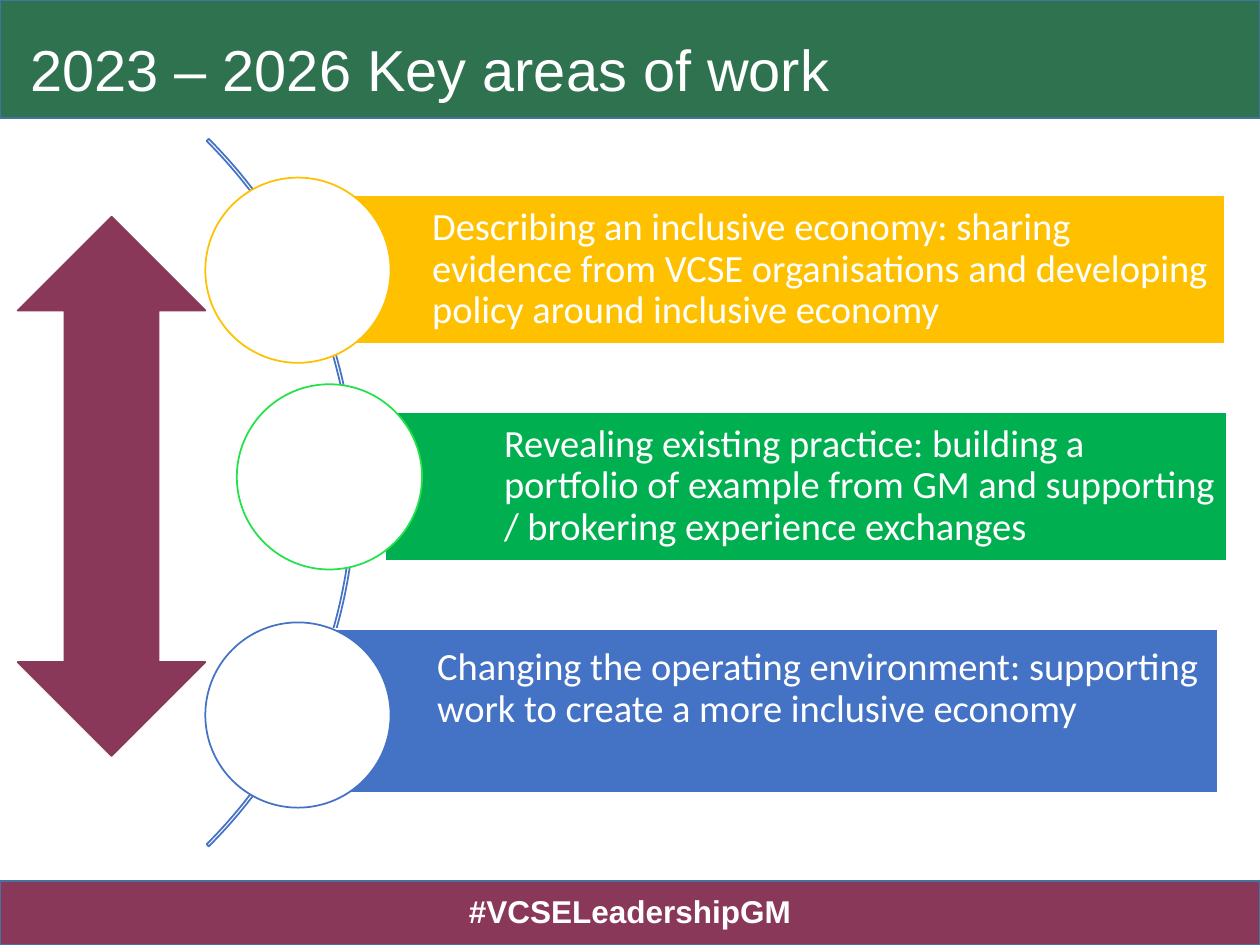
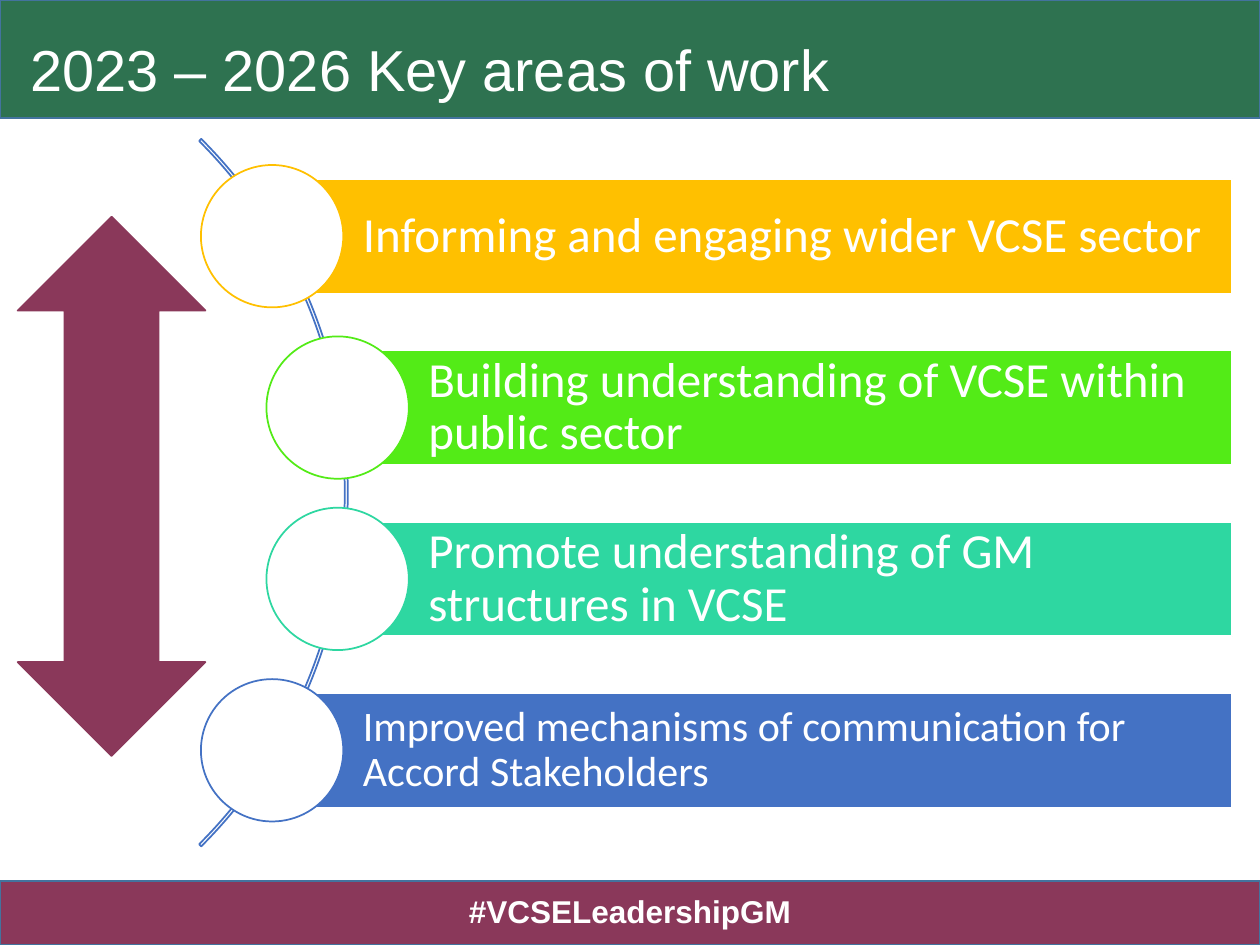
"""Build two slides on the key areas of work for 2023 to 2026."""
from dataclasses import dataclass

from pptx import Presentation
from pptx.dml.color import RGBColor
from pptx.enum.shapes import MSO_SHAPE as Preset
from pptx.enum.text import MSO_ANCHOR as Anchor, MSO_AUTO_SIZE as AutoSize, PP_ALIGN as Align
from pptx.shapes.autoshape import Shape
from pptx.slide import Slide, SlideLayout
from pptx.util import Inches, Pt


@dataclass(frozen=True)
class Theme:
    """Colours, fonts and type sizes of the deck."""

    white: RGBColor = RGBColor(0xFF, 0xFF, 0xFF)
    forest: RGBColor = RGBColor(0x2E, 0x72, 0x50)
    plum: RGBColor = RGBColor(0x8A, 0x38, 0x5A)
    steel: RGBColor = RGBColor(0x43, 0x73, 0x9E)
    blue: RGBColor = RGBColor(0x44, 0x72, 0xC4)
    amber: RGBColor = RGBColor(0xFF, 0xC0, 0x00)
    green: RGBColor = RGBColor(0x00, 0xB0, 0x50)
    bright_green: RGBColor = RGBColor(0x23, 0xE1, 0x48)
    lime: RGBColor = RGBColor(0x53, 0xEB, 0x17)
    teal: RGBColor = RGBColor(0x2E, 0xD7, 0xA1)
    heading_font: str = "Arial"
    body_font: str = "Calibri"
    title_size: float = 33
    footer_size: float = 18
    large_size: float = 28
    medium_size: float = 24
    small_size: float = 22
    line_spacing: float = 0.9


THEME = Theme()
TITLE = "2023 – 2026 Key areas of work"
HASHTAG = "#VCSELeadershipGM"


@dataclass(frozen=True)
class Box:
    """A rectangle measured in inches."""

    left: float
    top: float
    width: float
    height: float


@dataclass(frozen=True)
class Area:
    """One area of work: a coloured bar with a circle over its left end."""

    text: str
    bar: Box
    circle: Box
    fill: RGBColor
    ring: RGBColor
    size: float
    indent: float
    inset: float
    bottom_inset: float


def draw_shape(page: Slide, preset: Preset, box: Box, line: RGBColor,
               fill: RGBColor | None = None) -> Shape:
    """Add a preset shape with a thin outline and an optional fill."""
    shape = page.shapes.add_shape(preset, Inches(box.left), Inches(box.top),
                                  Inches(box.width), Inches(box.height))
    shape.shadow.inherit = False
    shape.line.color.rgb = line
    shape.line.width = Pt(1)
    if fill is None:
        shape.fill.background()
    else:
        shape.fill.solid()
        shape.fill.fore_color.rgb = fill
    return shape


def write_text(shape: Shape, text: str, font: str, size: float,
               align: Align = Align.LEFT, bold: bool = False) -> None:
    """Put one white, vertically centred paragraph in a shape."""
    frame = shape.text_frame
    frame.word_wrap = True
    frame.auto_size = AutoSize.NONE
    frame.vertical_anchor = Anchor.MIDDLE
    frame.text = text
    para = frame.paragraphs[0]
    para.alignment = align
    para.line_spacing = THEME.line_spacing
    para.font.name = font
    para.font.size = Pt(size)
    para.font.bold = bold
    para.font.color.rgb = THEME.white


def add_bands(page: Slide, layout: SlideLayout) -> None:
    """Draw the title and footer bands and move them to the shared layout."""
    header = draw_shape(page, Preset.RECTANGLE, Box(0, 0, 10, 0.94), THEME.steel, THEME.forest)
    footer = draw_shape(page, Preset.RECTANGLE, Box(0, 6.99, 10, 0.51), THEME.steel, THEME.plum)
    write_text(footer, HASHTAG, THEME.heading_font, THEME.footer_size, Align.CENTER, True)
    for band in (header, footer):
        layout.placeholders[0].element.addprevious(band.element)


def add_title(page: Slide) -> None:
    """Place and format the title."""
    title = page.shapes.title
    title.left, title.top = Inches(0.14), Inches(0)
    title.width, title.height = Inches(8.92), Inches(1.16)
    write_text(title, TITLE, THEME.heading_font, THEME.title_size)


def add_area(page: Slide, area: Area) -> None:
    """Draw the bar, its text and its circle."""
    bar = draw_shape(page, Preset.RECTANGLE, area.bar, THEME.white, area.fill)
    write_text(bar, area.text, THEME.body_font, area.size)
    frame = bar.text_frame
    frame.margin_left = Inches(area.indent)
    frame.margin_top = frame.margin_right = Inches(area.inset)
    frame.margin_bottom = Inches(area.bottom_inset)
    draw_shape(page, Preset.OVAL, area.circle, area.ring, THEME.white)


def fill_page(page: Slide, arc_left: float, areas: list[Area]) -> None:
    """Draw the title, the arc, the areas of work and the double arrow."""
    add_title(page)
    arc = draw_shape(page, Preset.BLOCK_ARC, Box(arc_left, -0.06, 7.94, 7.94), THEME.blue)
    for index, value in enumerate((189, 27, 0.003)):
        arc.adjustments[index] = value
    for area in areas:
        add_area(page, area)
    draw_shape(page, Preset.UP_DOWN_ARROW, Box(0.14, 1.72, 1.49, 4.28), THEME.plum, THEME.plum)


def economy_areas() -> list[Area]:
    """Return the three areas about an inclusive economy."""
    circle, indent, inset = 1.47, 0.94, 0.06
    spare_line = 0.34
    rows = [
        ("Describing an inclusive economy: sharing evidence from VCSE organisations "
         "and developing policy around inclusive economy",
         Box(2.49, 1.55, 7.23, 1.18), (1.63, 1.41), THEME.amber, THEME.amber, inset),
        ("Revealing existing practice: building a portfolio of example from GM "
         "and supporting / brokering experience exchanges",
         Box(3.06, 3.27, 6.68, 1.18), (1.88, 3.05), THEME.green, THEME.bright_green, inset),
        ("Changing the operating environment: supporting work to create "
         "a more inclusive economy",
         Box(2.53, 4.99, 7.14, 1.3), (1.63, 4.94), THEME.blue, THEME.blue, inset + spare_line),
    ]
    return [Area(text, bar, Box(*corner, circle, circle), fill, ring,
                 THEME.small_size, indent, inset, bottom)
            for text, bar, corner, fill, ring, bottom in rows]


def engagement_areas() -> list[Area]:
    """Return the four evenly spaced areas about engagement."""
    circle, height, right, first_top, pitch = 1.13, 0.91, 9.78, 1.42, 1.36
    outer, inner = 2.16, 2.68
    rows = [
        ("Informing and engaging wider VCSE sector",
         outer, THEME.amber, THEME.large_size, 0.08),
        ("Building understanding of VCSE within public sector",
         inner, THEME.lime, THEME.large_size, 0.08),
        ("Promote understanding of GM structures in VCSE",
         inner, THEME.teal, THEME.large_size, 0.08),
        ("Improved mechanisms of communication for Accord Stakeholders",
         outer, THEME.blue, THEME.medium_size, 0.07),
    ]
    areas = []
    for index, (text, left, colour, size, inset) in enumerate(rows):
        top = first_top + index * pitch
        bar = Box(left, top, right - left, height)
        disc = Box(left - circle / 2, top + (height - circle) / 2, circle, circle)
        areas.append(Area(text, bar, disc, colour, colour, size, 0.72, inset, inset))
    return areas


def main() -> None:
    """Build and save the deck."""
    deck = Presentation()
    deck.slide_width, deck.slide_height = Inches(10), Inches(7.5)
    layout = deck.slide_layouts.get_by_name("Title Only")
    pages = [deck.slides.add_slide(layout) for _ in range(2)]
    add_bands(pages[0], layout)
    fill_page(pages[0], -5.12, economy_areas())
    fill_page(pages[1], -5.18, engagement_areas())
    deck.save("out.pptx")


if __name__ == "__main__":
    main()
